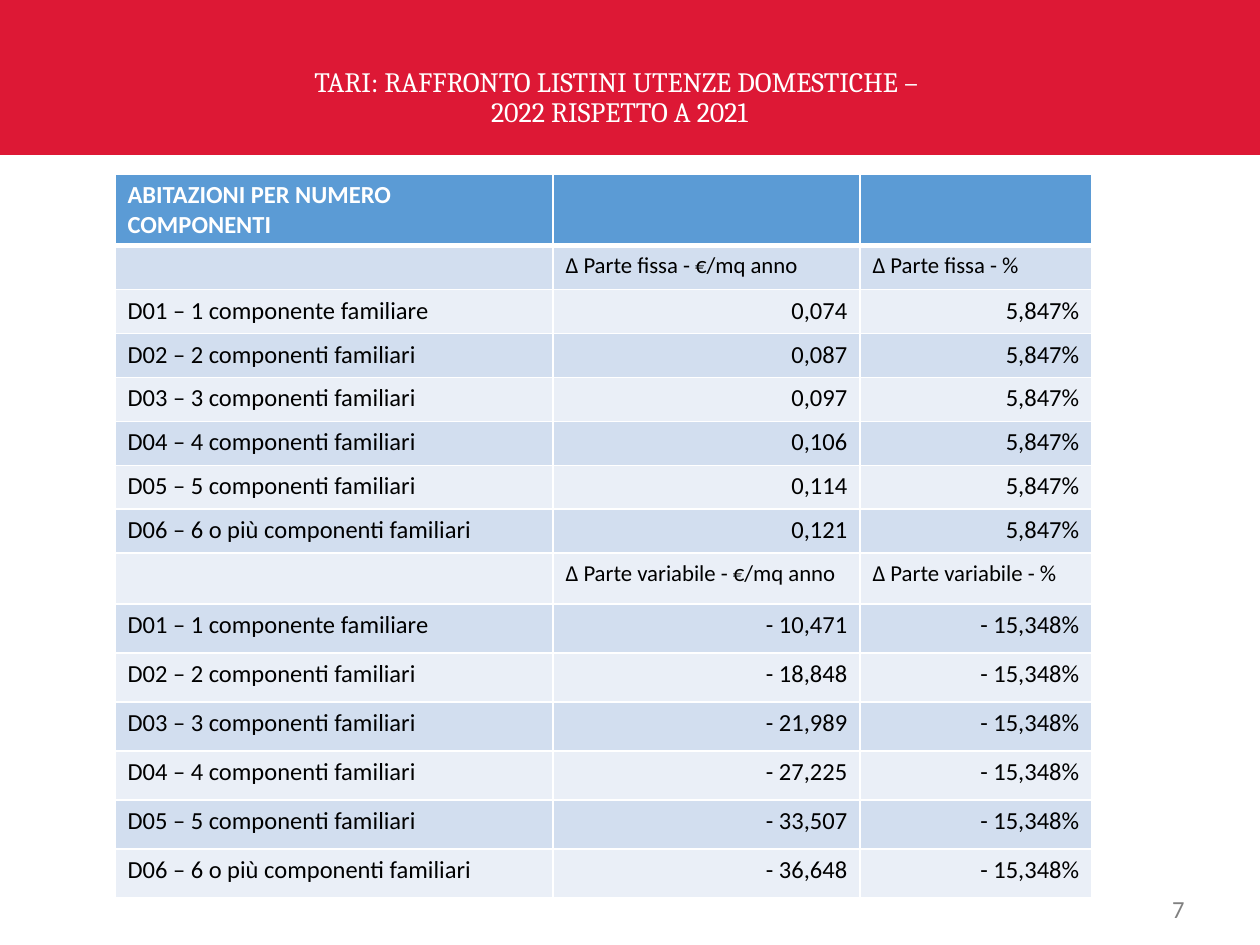
from lxml.etree import SubElement
from pptx import Presentation
from pptx.dml.color import RGBColor
from pptx.enum.shapes import MSO_SHAPE
from pptx.enum.text import MSO_ANCHOR, MSO_AUTO_SIZE, PP_ALIGN
from pptx.oxml.ns import qn
from pptx.util import Emu, Pt

# Content
TITLE = ["TARI: RAFFRONTO LISTINI UTENZE DOMESTICHE – ", "2022 RISPETTO A 2021"]
PAGE = "7"
HEADER = "ABITAZIONI PER NUMERO COMPONENTI"
HOMES = [
    "D01 – 1 componente familiare",
    "D02 – 2 componenti familiari",
    "D03 – 3 componenti familiari",
    "D04 – 4 componenti familiari",
    "D05 – 5 componenti familiari",
    "D06 – 6 o più componenti familiari",
]
# name, amounts, percentage, height of heading row, height of data rows
SECTIONS = [
    ("fissa", ["0,074", "0,087", "0,097", "0,106", "0,114", "0,121"],
     "5,847%", 44, 44),
    ("variabile", ["- 10,471", "- 18,848", "- 21,989", "- 27,225", "- 33,507", "- 36,648"],
     "- 15,348%", 51, 49),
]
COL_WIDTHS = [438, 307, 232]
HEADER_HEIGHT = 65

RED = RGBColor(0xDD, 0x18, 0x35)
BLUE = RGBColor(0x5B, 0x9B, 0xD5)
BANDS = [RGBColor(0xEA, 0xEF, 0xF7), RGBColor(0xD2, 0xDE, 0xEF)]
WHITE = RGBColor(0xFF, 0xFF, 0xFF)
BLACK = RGBColor(0, 0, 0)
GREY = RGBColor(0x80, 0x80, 0x80)


def px(n):
    return Emu(n * 914400 // 126)


def add_run(p, text, size, color, font="Calibri", bold=False):
    r = p.add_run()
    r.text = text
    r.font.size, r.font.name, r.font.bold = Pt(size), font, bold
    r.font.color.rgb = color


def set_borders(cell, bottom):
    tcPr = cell._tc.get_or_add_tcPr()
    for i, (side, width) in enumerate([("L", 1), ("R", 1), ("T", 1), ("B", bottom)]):
        ln = tcPr.makeelement(qn("a:ln" + side), {"w": str(Pt(width))})
        fill = SubElement(ln, qn("a:solidFill"))
        SubElement(fill, qn("a:srgbClr"), val=str(WHITE))
        tcPr.insert(i, ln)


prs = Presentation()
prs.slide_width, prs.slide_height = px(1260), px(945)
s = prs.slides.add_slide(prs.slide_layouts[5])

# Red band, behind the title
band = s.shapes.add_shape(MSO_SHAPE.RECTANGLE, 0, 0, px(1260), px(155))
band.shadow.inherit = False
band.fill.solid()
band.fill.fore_color.rgb = RED
band.line.fill.background()
s.shapes._spTree.insert(2, band._element)

# Title
title = s.shapes.title
title.left, title.top, title.width, title.height = px(203), px(49), px(833), px(86)
tf = title.text_frame
tf.auto_size = MSO_AUTO_SIZE.NONE
tf.vertical_anchor = MSO_ANCHOR.BOTTOM
p = tf.paragraphs[0]
p.alignment, p.line_spacing = PP_ALIGN.CENTER, 0.9
add_run(p, TITLE[0], 16, WHITE, "Cambria")
p.add_line_break()
add_run(p, TITLE[1], 16, WHITE, "Cambria")

# Page number
tf = s.shapes.add_textbox(px(903), px(890), px(294), px(37)).text_frame
tf.word_wrap = True
tf.vertical_anchor = MSO_ANCHOR.MIDDLE
p = tf.paragraphs[0]
p.alignment = PP_ALIGN.RIGHT
add_run(p, PAGE, 14, GREY)

# Table rows: texts, height, size, whether the figures align right
rows = [([HEADER, "", ""], HEADER_HEIGHT, 14, False)]
for name, amounts, percent, head_height, height in SECTIONS:
    heads = ["", f"∆ Parte {name} - €/mq anno", f"∆ Parte {name} - %"]
    rows.append((heads, head_height, 13, False))
    rows += [([home, amount, percent], height, 14, True)
             for home, amount in zip(HOMES, amounts)]

# Table
table = s.shapes.add_table(len(rows), len(COL_WIDTHS), px(115), px(174),
                           px(sum(COL_WIDTHS)), px(sum(row[1] for row in rows))).table
for column, width in zip(table.columns, COL_WIDTHS):
    column.width = px(width)
for i, (texts, height, size, figures) in enumerate(rows):
    table.rows[i].height = px(height)
    is_header = i == 0
    for j, text in enumerate(texts):
        cell = table.cell(i, j)
        cell.fill.solid()
        cell.fill.fore_color.rgb = BLUE if is_header else BANDS[i % 2]
        set_borders(cell, 3 if is_header else 1)
        p = cell.text_frame.paragraphs[0]
        if figures and j:
            p.alignment = PP_ALIGN.RIGHT
        if text:
            add_run(p, text, size, WHITE if is_header else BLACK, bold=is_header)
        else:
            SubElement(p._p, qn("a:endParaRPr"), sz=str(size * 100))

prs.save("out.pptx")
